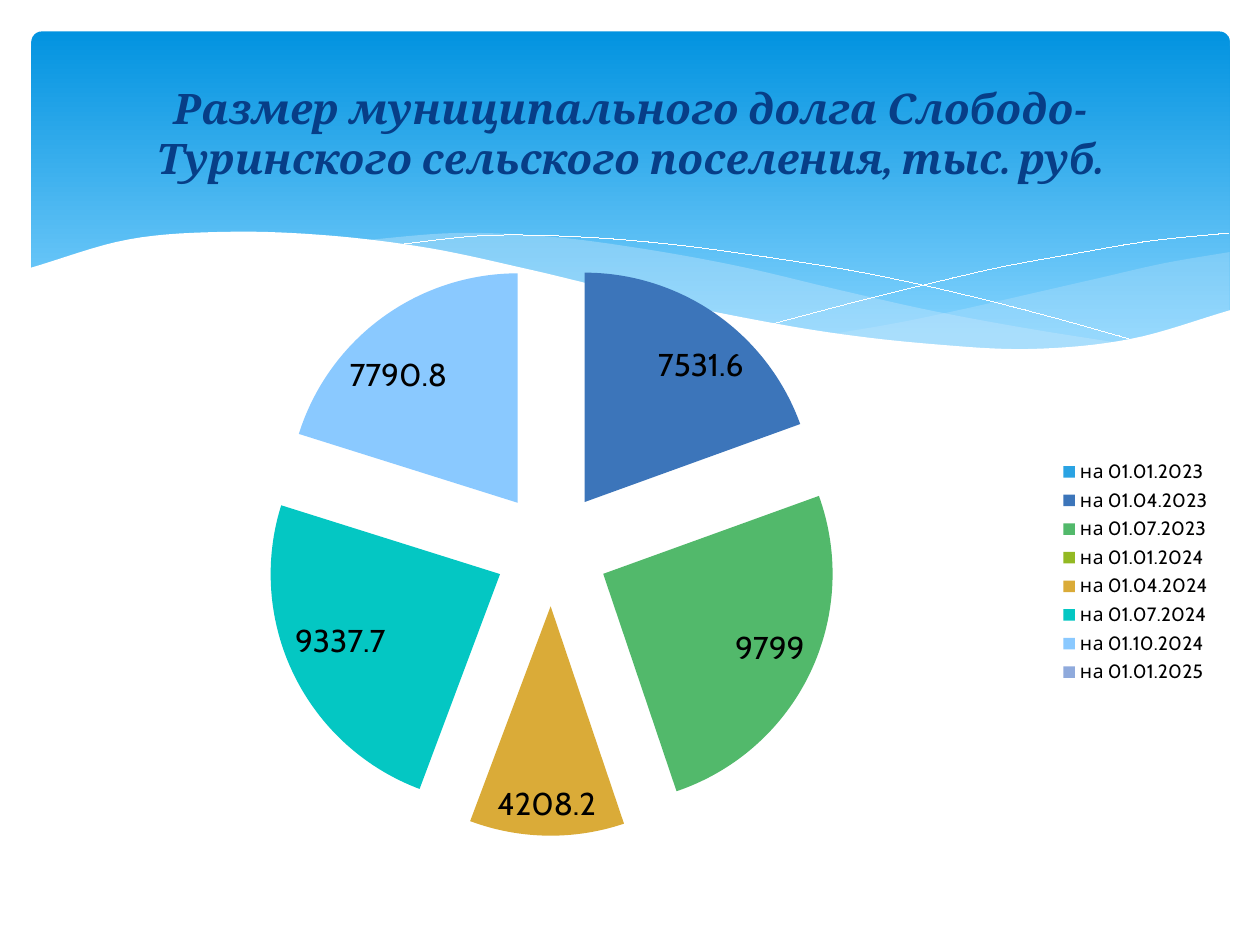
from lxml import etree
from pptx import Presentation
from pptx.chart import data as cd
from pptx.dml import color
from pptx.enum import chart as ec, shapes, text
from pptx.oxml import parse_xml
from pptx.oxml.ns import nsdecls, qn
from pptx.util import Inches, Pt

WHITE, PALE, NAVY, BLACK = "FFFFFF", "C6E7FC", "073E87", "000000"
HEAD_FONT, BODY_FONT = "Cambria", "Cabin"
STEPS_PER_SPAN = 8
DEBT = [
    ("на 01.01.2023", 0, "2AA3E3"),
    ("на 01.04.2023", 7531.6, "3C75BA"),
    ("на 01.07.2023", 9799, "52B96B"),
    ("на 01.01.2024", 0, "93B923"),
    ("на 01.04.2024", 4208.2, "DAAB38"),
    ("на 01.07.2024", 9337.7, "04C7C3"),
    ("на 01.10.2024", 7790.8, "8AC9FF"),
    ("на 01.01.2025", 0, "8FAADC")]


def rgb(value):
    return color.RGBColor.from_string(value)


def wave(left, right, heights):
    spans = len(heights) - 1
    padded = [2 * heights[0] - heights[1], *heights, 2 * heights[-1] - heights[-2]]
    points = []
    for i in range(spans):
        a, b, c, d = padded[i:i + 4]
        for step in range(STEPS_PER_SPAN):
            t = step / STEPS_PER_SPAN
            y = b + t / 2 * (c - a + t * (2 * a - 5 * b + 4 * c - d
                                          + t * (3 * (b - c) + d - a)))
            points.append((left + (right - left) * (i + t) / spans, y))
    return points + [(right, heights[-1])]


def add_outline(s, points, close):
    pts = [(Inches(x), Inches(y)) for x, y in points]
    builder = s.shapes.build_freeform(*pts[0])
    builder.add_line_segments(pts[1:], close=close)
    sp = builder.convert_to_shape()
    sp.shadow.inherit = False
    return sp


def add_area(s, top_edge, bottom_edge, value, alpha=100):
    sp = add_outline(s, top_edge + bottom_edge[::-1], close=True)
    sp.line.fill.background()
    sp.fill.solid()
    sp.fill.fore_color.rgb = rgb(value)
    clr = sp.fill._xPr.find(qn("a:solidFill"))[0]
    etree.SubElement(clr, qn("a:alpha")).set("val", str(alpha * 1000))


def add_hairline(s, points, value):
    sp = add_outline(s, points, close=False)
    sp.fill.background()
    sp.line.color.rgb = rgb(value)
    sp.line.width = Pt(0.01)


def add_banner(s):
    sp = s.shapes.add_shape(shapes.MSO_SHAPE.ROUNDED_RECTANGLE, Inches(0.25),
                            Inches(0.25), Inches(9.51), Inches(2.7))
    sp.adjustments[0] = 0.03
    sp.shadow.inherit = False
    sp.line.fill.background()
    sp.fill.gradient()
    sp.fill.gradient_angle = 270
    for stop, position, value in zip(sp.fill.gradient_stops, (0, 0.9), ("0293E0", "83D3FE")):
        stop.position = position
        stop.color.rgb = rgb(value)


def add_waves(s):
    add_area(s, wave(6.61, 9.76, [2.65, 2.56, 2.45, 2.33, 2.21, 2.09, 2]),
             wave(6.61, 9.76, [2.65, 2.72, 2.77, 2.77, 2.74, 2.64, 2.47]), PALE, alpha=29)
    add_area(s, wave(2.86, 8.93, [1.91, 1.85, 1.88, 1.98, 2.12, 2.3, 2.47, 2.61, 2.73]),
             wave(2.86, 8.93, [1.91, 2.03, 2.19, 2.37, 2.53, 2.66, 2.75, 2.78, 2.73]),
             PALE, alpha=40)
    add_hairline(s, wave(3.09, 9.07, [1.95, 1.87, 1.88, 1.94, 2.04, 2.16, 2.32, 2.51, 2.72]),
                 WHITE)
    add_hairline(s, wave(6.13, 9.75, [2.57, 2.41, 2.26, 2.12, 2.01, 1.91, 1.85]), WHITE)
    add_area(s, wave(0.23, 9.77, [2.13, 1.9, 1.84, 1.87, 1.97, 2.14, 2.33,
                                  2.5, 2.64, 2.73, 2.77, 2.69, 2.46]),
             [(0.23, 3.29), (9.77, 3.29)], WHITE)


def set_font(font, size, value, name, bold=False, italic=False):
    font.size = Pt(size)
    font.name = name
    font.bold = bold
    font.italic = italic
    font.color.rgb = rgb(value)


def write(tf, content, align=text.PP_ALIGN.CENTER, **fmt):
    tf.word_wrap = True
    tf.auto_size = text.MSO_AUTO_SIZE.NONE
    tf.vertical_anchor = text.MSO_ANCHOR.MIDDLE
    p = tf.paragraphs[0]
    p.alignment = align
    r = p.add_run()
    r.text = content
    set_font(r.font, **fmt)


def add_title(s, content):
    sp = s.shapes.title
    sp.left, sp.top, sp.width, sp.height = map(Inches, (0.5, 0.37, 9, 1.37))
    write(sp.text_frame, content, size=24, value=NAVY, name=HEAD_FONT,
          bold=True, italic=True)
    s.shapes._spTree.append(sp._element)


def format_slices(series):
    for i, (_, _, value) in enumerate(DEBT):
        fill = series.points[i].format.fill
        fill.solid()
        fill.fore_color.rgb = rgb(value)
    explosion = parse_xml(f'<c:explosion {nsdecls("c")} val="25"/>')
    series._element.find(qn("c:dPt")).addprevious(explosion)


def format_labels(labels):
    labels.show_value = True
    labels.position = ec.XL_LABEL_POSITION.BEST_FIT
    set_font(labels.font, 18, BLACK, BODY_FONT)
    empty = [i for i, (_, amount, _) in enumerate(DEBT) if not amount]
    for position, i in enumerate(empty):
        labels._element.insert(position, parse_xml(
            f'<c:dLbl {nsdecls("c")}><c:idx val="{i}"/><c:delete val="1"/></c:dLbl>'))


def place_plot(chart, **box):
    area = chart._chartSpace.chart.plotArea
    for old in area.findall(qn("c:layout")):
        area.remove(old)
    sides = "".join(f'<c:{side} val="{share}"/>' for side, share in box.items())
    area.insert(0, parse_xml(
        f'<c:layout {nsdecls("c")}><c:manualLayout><c:layoutTarget val="inner"/>'
        f'<c:xMode val="edge"/><c:yMode val="edge"/>{sides}</c:manualLayout></c:layout>'))


def add_pie(s):
    data = cd.CategoryChartData()
    data.categories = [name for name, _, _ in DEBT]
    data.add_series("Series 1", [amount for _, amount, _ in DEBT])
    chart = s.shapes.add_chart(ec.XL_CHART_TYPE.PIE, Inches(0.43), Inches(1.94),
                               Inches(9.29), Inches(5.2), data).chart
    chart.has_title = False
    set_font(chart.font, 18, BLACK, BODY_FONT)
    chart.has_legend = True
    chart.legend.position = ec.XL_LEGEND_POSITION.RIGHT
    chart.legend.include_in_layout = False
    set_font(chart.legend.font, 11, BLACK, BODY_FONT)
    chart.plots[0].vary_by_categories = True
    series = chart.plots[0].series[0]
    format_slices(series)
    format_labels(series.data_labels)
    place_plot(chart, x=0.18, y=0.02, w=0.49, h=0.89)


def main():
    prs = Presentation()
    prs.slide_width, prs.slide_height = Inches(10), Inches(7.5)
    s = prs.slides.add_slide(prs.slide_layouts[5])
    add_banner(s)
    add_waves(s)
    add_pie(s)
    add_title(s, "Размер муниципального долга Слободо-Туринского сельского поселения, тыс. руб.")
    prs.save("out.pptx")


if __name__ == "__main__":
    main()
